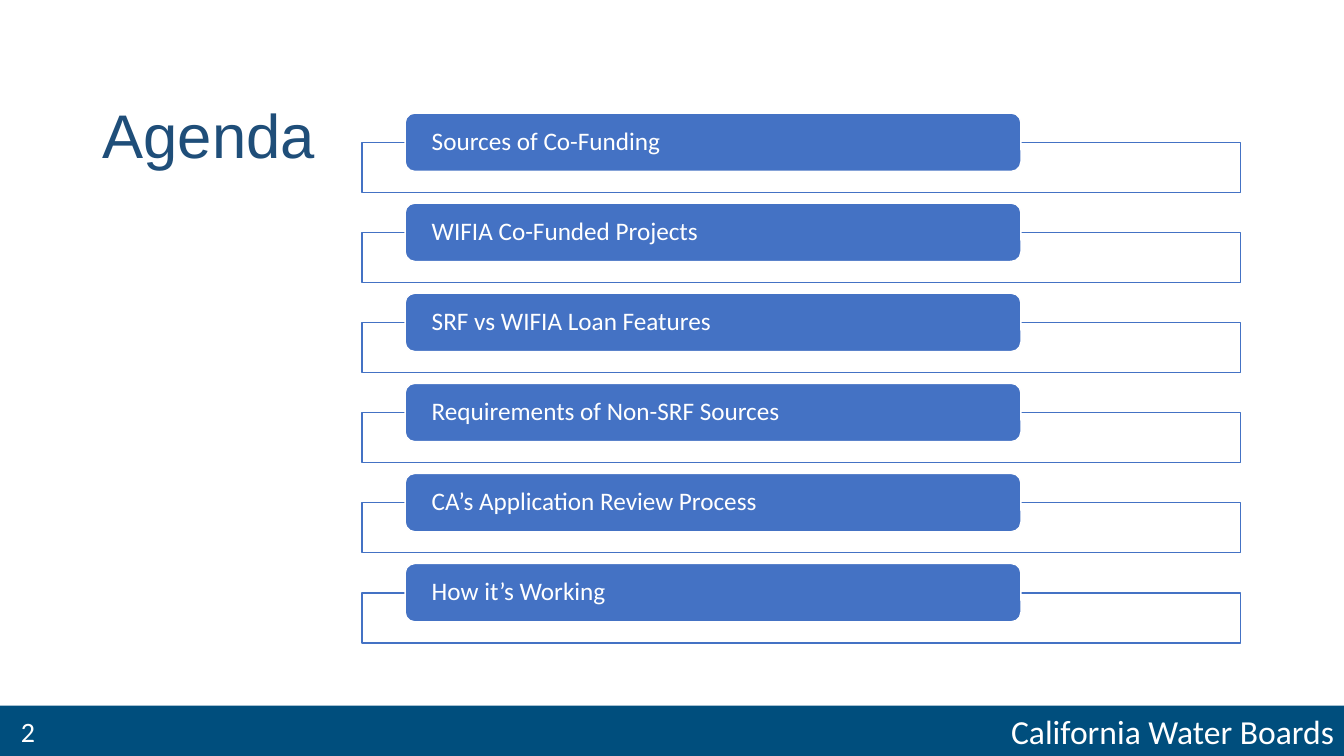
from lxml.etree import SubElement
from pptx import Presentation
from pptx.dml.color import RGBColor
from pptx.enum.shapes import MSO_SHAPE
from pptx.enum.text import MSO_ANCHOR, PP_ALIGN
from pptx.oxml.ns import qn
from pptx.util import Cm, Pt

COLORS = {"white": "FFFFFF", "blue": "4472C4", "title": "1F4E79", "footer": "004E7D"}
TOPICS = [
    "Sources of Co-Funding",
    "WIFIA Co-Funded Projects",
    "SRF vs WIFIA Loan Features",
    "Requirements of Non-SRF Sources",
    "CA’s Application Review Process",
    "How it’s Working",
]
ROW_PITCH = 2.27


def color(name):
    return RGBColor.from_string(COLORS[name])


def write(shape, text, size, font="Calibri", ink="white", align=PP_ALIGN.LEFT,
          spacing=1.0, side=0.25, edge=0.13):
    frame = shape.text_frame
    frame.word_wrap = True
    frame.vertical_anchor = MSO_ANCHOR.MIDDLE
    frame.margin_left = frame.margin_right = Cm(side)
    frame.margin_top = frame.margin_bottom = Cm(edge)
    paragraph = frame.paragraphs[0]
    paragraph.alignment = align
    paragraph.line_spacing = spacing
    run = paragraph.add_run()
    run.text = text
    run.font.name = font
    run.font.size = Pt(size)
    run.font.color.rgb = color(ink)


class AgendaSlide:
    """Draws the agenda elements on one slide, with lengths in centimetres."""

    def __init__(self, slide):
        self.shapes = slide.shapes

    def block(self, kind, box, fill, line=None, opacity=None):
        block = self.shapes.add_shape(kind, *map(Cm, box))
        block.shadow.inherit = False
        block.fill.solid()
        block.fill.fore_color.rgb = color(fill)
        if opacity:
            tint = block.fill._xPr.find(".//" + qn("a:srgbClr"))
            SubElement(tint, qn("a:alpha"), val=str(opacity * 1000))
        if line:
            block.line.color.rgb = color(line)
            block.line.width = Pt(1)
        else:
            block.line.fill.background()
        return block

    def label(self, box, text, size, **style):
        write(self.shapes.add_textbox(*map(Cm, box)), text, size, **style)

    def footer(self, text, number):
        band = self.block(MSO_SHAPE.RECTANGLE, (0, 17.78, 33.87, 1.27), "footer")
        write(band, text, 24, align=PP_ALIGN.RIGHT)
        self.label((0.28, 17.91, 7.62, 1.02), number, 20)

    def topic(self, row, text):
        top = 2.85 + row * ROW_PITCH
        self.block(MSO_SHAPE.RECTANGLE, (9.12, top + 0.74, 22.15, 1.26),
                   "white", line="blue", opacity=90)
        bar = self.block(MSO_SHAPE.ROUNDED_RECTANGLE, (10.21, top, 15.52, 1.47),
                         "blue", line="white")
        write(bar, text, 18, spacing=0.9, side=0.6, edge=0)


def main():
    deck = Presentation()
    deck.slide_width, deck.slide_height = Cm(33.87), Cm(19.05)
    agenda = AgendaSlide(deck.slides.add_slide(deck.slide_layouts[6]))
    agenda.footer("California Water Boards", "2")
    agenda.label((2.34, 1.27, 10.92, 4.45), "Agenda", 44,
                 font="Arial", ink="title", spacing=0.9)
    for row, text in enumerate(TOPICS):
        agenda.topic(row, text)
    deck.save("out.pptx")


if __name__ == "__main__":
    main()
